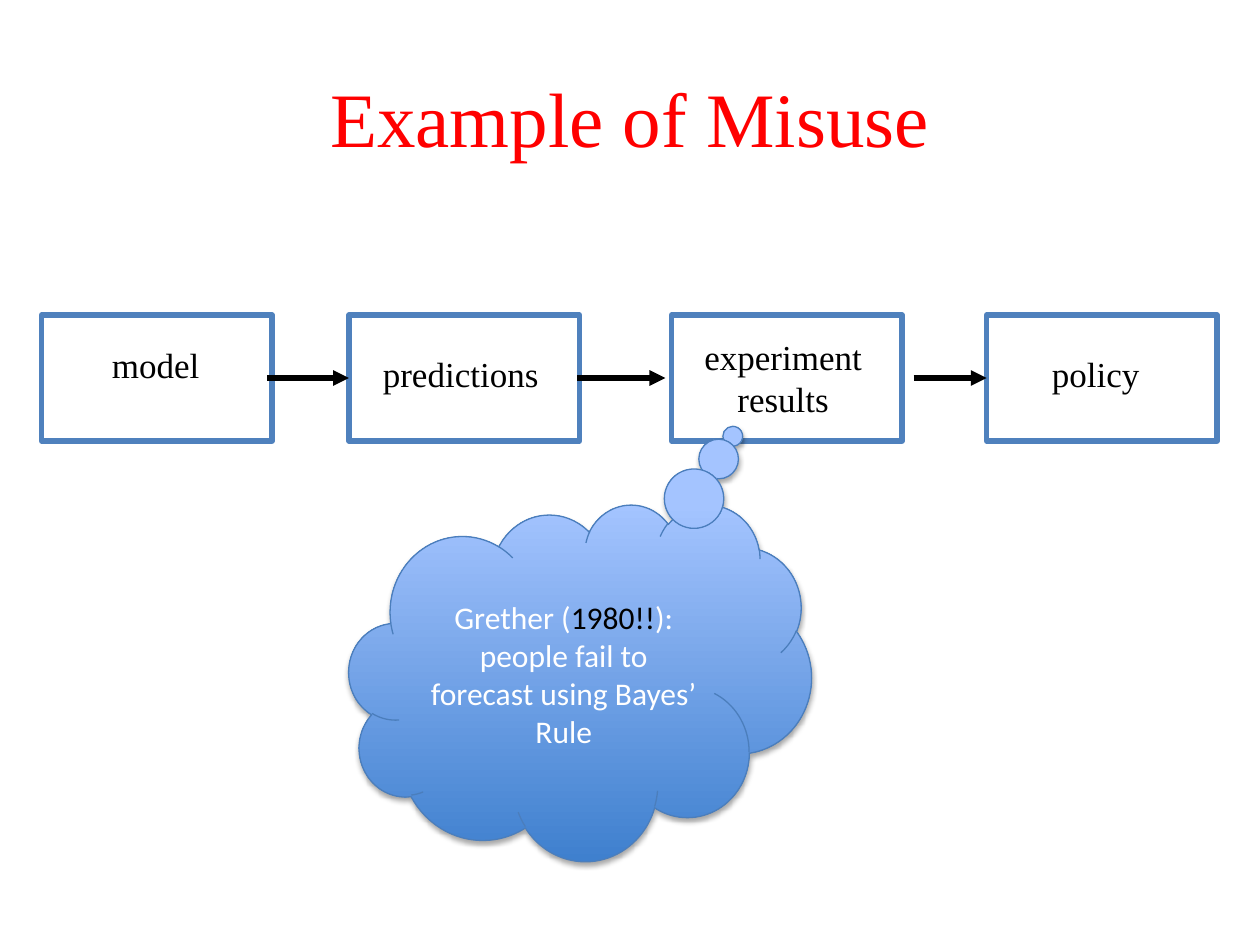
"""Build the slide that shows a misuse of the model-to-policy chain."""
from dataclasses import dataclass

from lxml import etree
from pptx import Presentation
from pptx import util as u
from pptx.dml.color import RGBColor
from pptx.enum import shapes, text
from pptx.oxml import ns

EMU_PER_PX = 9144
SERIF, SANS = "Times New Roman", "Calibri"
STAGE_TOP, STAGE_WIDTH, STAGE_HEIGHT = 250, 183, 100
COLORS = {
    "title": "FF0000",
    "ink": "000000",
    "border": "4F81BD",
    "cloud_line": "4B7EBC",
    "cloud_bottom": "3F80CE",
    "cloud_top": "A4C4FF",
    "cloud_text": "FFFFFF",
}


@dataclass(frozen=True)
class Box:
    left: int
    top: int
    width: int
    height: int

    def emu(self) -> tuple[u.Emu, ...]:
        return tuple(px(n) for n in (self.left, self.top, self.width, self.height))


@dataclass(frozen=True)
class Stage:
    name: str
    left: int
    label: Box
    lines: tuple[str, ...]
    align: text.PP_ALIGN = text.PP_ALIGN.LEFT


@dataclass(frozen=True)
class Arrow:
    start: int
    end: int
    target: str = ""


STAGES = (
    Stage("experiment", 533, Box(542, 261, 159, 77), ("experiment", "results"), text.PP_ALIGN.CENTER),
    Stage("predictions", 277, Box(294, 275, 160, 44), ("predictions",)),
    Stage("policy", 783, Box(825, 275, 91, 43), ("policy",)),
    Stage("model", 33, Box(79, 268, 96, 43), ("model",)),
)
ARROWS = (Arrow(212, 277, "predictions"), Arrow(458, 528), Arrow(725, 783, "policy"))
CLAIM = (
    ("Grether (", "cloud_text"),
    ("1980!!", "ink"),
    ("): people fail to forecast using Bayes’ Rule", "cloud_text"),
)


def px(length: int) -> u.Emu:
    """Turn px into EMU."""
    return u.Emu(length * EMU_PER_PX)


def rgb(name: str) -> RGBColor:
    """Look up a colour by its role."""
    return RGBColor.from_string(COLORS[name])


def style_line(line, color: str, points: float) -> None:
    """Give an outline its colour and width."""
    line.color.rgb = rgb(color)
    line.width = u.Pt(points)


def style_font(font, face: str, size: int, color: str) -> None:
    """Give a font its face, size and colour."""
    font.name, font.size = face, u.Pt(size)
    font.color.rgb = rgb(color)


def draw_stage(canvas, stage: Stage):
    """Draw one grouped box with its label and return the box."""
    members = canvas.add_group_shape().shapes
    frame = Box(stage.left, STAGE_TOP, STAGE_WIDTH, STAGE_HEIGHT)
    border = members.add_shape(shapes.MSO_SHAPE.RECTANGLE, *frame.emu())
    border.fill.background()
    style_line(border.line, "border", 3)
    border.shadow.inherit = False
    label = members.add_textbox(*stage.label.emu()).text_frame
    label.word_wrap = False
    label.auto_size = text.MSO_AUTO_SIZE.SHAPE_TO_FIT_TEXT
    label.text = "\n".join(stage.lines)
    for paragraph in label.paragraphs:
        paragraph.alignment = stage.align
        style_font(paragraph.font, SERIF, 20, "ink")
    return border


def draw_arrow(canvas, arrow: Arrow, borders: dict) -> None:
    """Draw one arrow through the middle of the row of stages."""
    middle = px(STAGE_TOP + STAGE_HEIGHT // 2)
    link = canvas.add_connector(
        shapes.MSO_CONNECTOR.STRAIGHT, px(arrow.start), middle, px(arrow.end), middle
    )
    if arrow.target:
        link.end_connect(borders[arrow.target], 1)
    style_line(link.line, "ink", 3)
    etree.SubElement(link.line._get_or_add_ln(), ns.qn("a:tailEnd"), type="triangle")
    etree.SubElement(link._element.spPr, ns.qn("a:effectLst"))


def add_soft_shadow(shape) -> None:
    """Cast a soft black shadow straight down."""
    shape.shadow.inherit = False
    effects = shape._element.spPr.find(ns.qn("a:effectLst"))
    shadow = etree.SubElement(
        effects, ns.qn("a:outerShdw"),
        blurRad=str(u.Pt(3.1)), dist=str(u.Pt(1.8)), dir="5400000", rotWithShape="0",
    )
    shade = etree.SubElement(shadow, ns.qn("a:srgbClr"), val=COLORS["ink"])
    etree.SubElement(shade, ns.qn("a:alpha"), val="35000")


def draw_cloud(canvas) -> None:
    """Draw the thought cloud with its claim."""
    cloud = canvas.add_shape(shapes.MSO_SHAPE.CLOUD_CALLOUT, *Box(277, 400, 367, 283).emu())
    cloud.adjustments[0], cloud.adjustments[1] = 0.33, -0.69
    cloud.fill.gradient()
    cloud.fill.gradient_angle = 90
    for stop, color in zip(cloud.fill.gradient_stops, ("cloud_bottom", "cloud_top")):
        stop.color.rgb = rgb(color)
    style_line(cloud.line, "cloud_line", 0.75)
    add_soft_shadow(cloud)
    cloud.text_frame.word_wrap = True
    cloud.text_frame.vertical_anchor = text.MSO_ANCHOR.MIDDLE
    claim = cloud.text_frame.paragraphs[0]
    claim.alignment = text.PP_ALIGN.CENTER
    for words, color in CLAIM:
        run = claim.add_run()
        run.text = words
        style_font(run.font, SANS, 18, color)


def draw_title(canvas) -> None:
    """Draw the heading."""
    heading = canvas.add_textbox(*Box(50, 30, 900, 125).emu()).text_frame
    heading.word_wrap = True
    heading.vertical_anchor = text.MSO_ANCHOR.MIDDLE
    heading.text = "Example of Misuse"
    heading.paragraphs[0].alignment = text.PP_ALIGN.CENTER
    style_font(heading.paragraphs[0].font, SERIF, 44, "title")


def main() -> None:
    """Build and save the slide."""
    deck = Presentation()
    deck.slide_width, deck.slide_height = px(1000), px(750)
    canvas = deck.slides.add_slide(deck.slide_layouts[6]).shapes
    borders = {stage.name: draw_stage(canvas, stage) for stage in STAGES}
    for arrow in ARROWS:
        draw_arrow(canvas, arrow, borders)
    draw_cloud(canvas)
    draw_title(canvas)
    deck.save("out.pptx")


if __name__ == "__main__":
    main()
